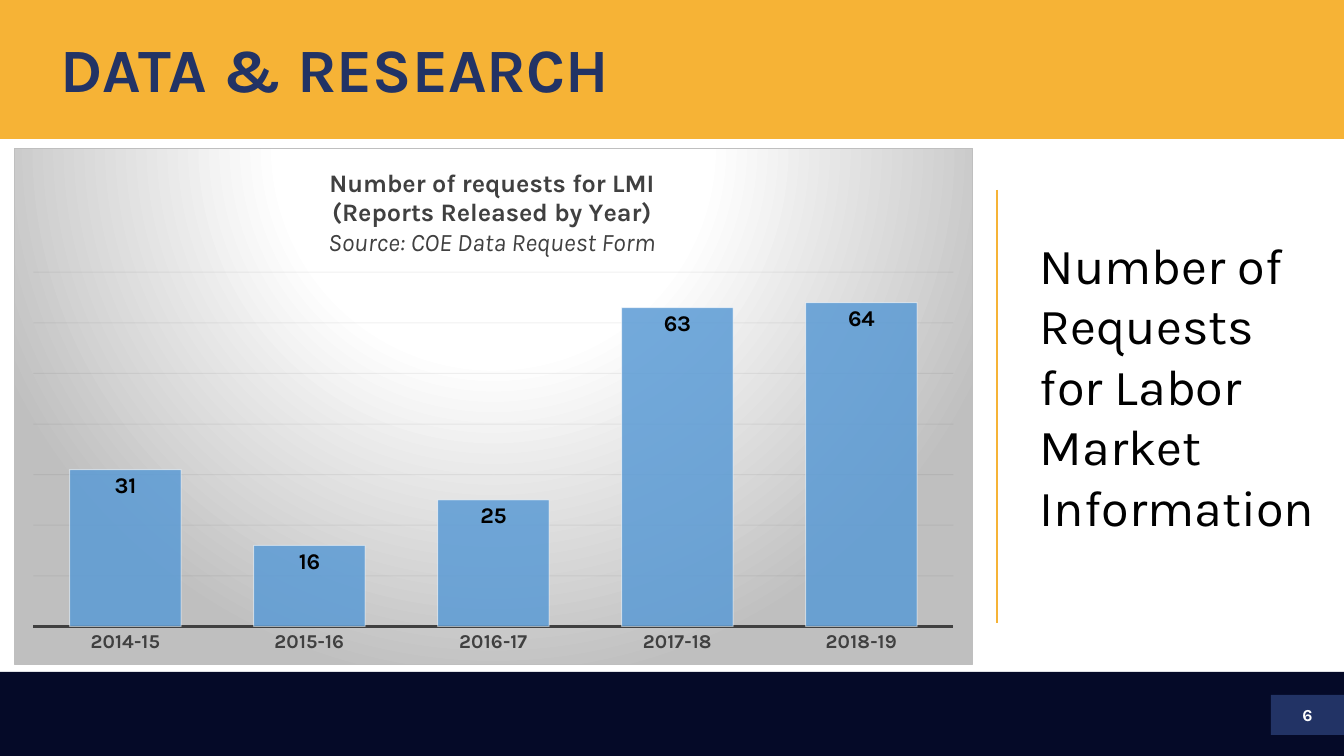
from lxml import etree
from pptx import Presentation
from pptx.chart.data import CategoryChartData
from pptx.dml.color import RGBColor
from pptx.enum.chart import XL_CHART_TYPE, XL_LABEL_POSITION, XL_TICK_MARK
from pptx.enum.shapes import MSO_CONNECTOR, MSO_SHAPE
from pptx.enum.text import MSO_ANCHOR, MSO_AUTO_SIZE, PP_ALIGN
from pptx.oxml import parse_xml
from pptx.oxml.ns import nsdecls, qn
from pptx.util import Pt

COLUMNS = XL_CHART_TYPE.COLUMN_CLUSTERED
INSIDE_END = XL_LABEL_POSITION.INSIDE_END
NO_TICK = XL_TICK_MARK.NONE
STRAIGHT = MSO_CONNECTOR.STRAIGHT
RECT = MSO_SHAPE.RECTANGLE
MIDDLE, TOP = MSO_ANCHOR.MIDDLE, MSO_ANCHOR.TOP
NO_FIT = MSO_AUTO_SIZE.NONE
LEFT, CENTER = PP_ALIGN.LEFT, PP_ALIGN.CENTER

FONT = "Karla"
GOLD, NAVY, BLUE = "F6B336", "050A28", "223365"
BLACK, WHITE, DARK = "000000", "FFFFFF", "404040"

TITLE = "DATA & RESEARCH"
SIDE_TEXT = "Number of Requests for Labor Market Information"
PAGE = "6"
CHART_TITLE = [
    ("Number of requests for LMI", True, False),
    ("(Reports Released by Year)", True, False),
    ("Source: COE Data Request Form", False, True),
]
REQUESTS = {"2014-15": 31, "2015-16": 16, "2016-17": 25, "2017-18": 63, "2018-19": 64}

BANDS = [
    ((0, 0, 1344, 139), GOLD),
    ((0, 672, 1344, 84), NAVY),
    ((1271, 695, 73, 40), BLUE),
]
TITLE_BOX = (50, 0, 1239, 146)
PAGE_BOX = (1271, 695, 73, 40)
SIDE_BOX = (1030, 229, 304, 315)
RULE = (997, 190, 997, 623)
CHART_BOX = (14, 148, 959, 517)
PLOT_BOX = (33, 272, 921, 355)
CHART_TITLE_AT = (325, 164)


def px(*values):
    return [round(v * 914400 / 100.8) for v in values]


def rgb(color):
    return RGBColor.from_string(color)


def style(font, size, color, bold=False, italic=False):
    font.name, font.size = FONT, Pt(size)
    font.bold, font.italic = bold, italic
    font.color.rgb = rgb(color)


def write(sp, text, size, color, bold=False, align=LEFT, anchor=TOP):
    tf = sp.text_frame
    tf.word_wrap, tf.auto_size, tf.vertical_anchor = True, NO_FIT, anchor
    p = tf.paragraphs[0]
    p.alignment = align
    r = p.add_run()
    r.text = text
    style(r.font, size, color, bold)
    return p


def set_line(line, color, width):
    line.color.rgb = rgb(color)
    line.width = Pt(width)


def set_alpha(fill, percent):
    for clr in fill.iter(qn("a:srgbClr")):
        etree.SubElement(clr, qn("a:alpha")).set("val", str(percent * 1000))


def place(parent, index, left, top, width=None, height=None, target=""):
    for old in parent.findall(qn("c:layout")):
        parent.remove(old)
    x, y, w, h = CHART_BOX
    layout = etree.Element(qn("c:layout"))
    manual = etree.SubElement(layout, qn("c:manualLayout"))
    values = [("layoutTarget", target), ("xMode", "edge"), ("yMode", "edge"),
              ("x", round((left - x) / w, 4)), ("y", round((top - y) / h, 4))]
    if width:
        values += [("w", round(width / w, 4)), ("h", round(height / h, 4))]
    for tag, value in values:
        if value != "":
            etree.SubElement(manual, qn("c:" + tag)).set("val", str(value))
    parent.insert(index, layout)


def add_requests_chart(s):
    data = CategoryChartData()
    data.categories = list(REQUESTS)
    data.add_series("Series 1", list(REQUESTS.values()))
    chart = s.shapes.add_chart(COLUMNS, *px(*CHART_BOX), data).chart
    chart.has_legend = False
    style(chart.font, 10, BLACK)

    chart.has_title = True
    tf = chart.chart_title.text_frame
    for i, (text, bold, italic) in enumerate(CHART_TITLE):
        p = tf.add_paragraph() if i else tf.paragraphs[0]
        r = p.add_run()
        r.text = text
        style(r.font, 18, DARK, bold, italic)
    chart_el = chart._chartSpace.find(qn("c:chart"))
    place(chart_el.find(qn("c:title")), 1, *CHART_TITLE_AT)
    place(chart_el.find(qn("c:plotArea")), 0, *PLOT_BOX, target="inner")

    cat = chart.category_axis
    cat.major_tick_mark = cat.minor_tick_mark = NO_TICK
    style(cat.tick_labels.font, 14, DARK, True)
    set_line(cat.format.line, DARK, 1.5)
    val = chart.value_axis
    val.minimum_scale, val.maximum_scale, val.major_unit = 0, 70, 10
    val.visible = False
    val.has_major_gridlines = True
    grid = val.major_gridlines.format.line
    set_line(grid, "0D0D0D", 0.75)
    set_alpha(val.major_gridlines._xAx.find(qn("c:majorGridlines")), 5)

    plot = chart.plots[0]
    plot.vary_by_categories = False
    plot.gap_width = 65
    ser = plot.series[0]
    ser.format.fill.solid()
    ser.format.fill.fore_color.rgb = rgb("5B9BD5")
    set_line(ser.format.line, WHITE, 0.75)
    sp_pr = ser._element.find(qn("c:spPr"))
    set_alpha(sp_pr.find(qn("a:solidFill")), 85)
    set_alpha(sp_pr.find(qn("a:ln")), 50)
    labels = ser.data_labels
    labels.show_value = True
    labels.position = INSIDE_END
    style(labels.font, 16, BLACK, True)

    stops = "".join(
        f'<a:gs pos="{pos * 1000}"><a:srgbClr val="{color}"/></a:gs>'
        for pos, color in [(0, WHITE), (39, WHITE), (100, "BFBFBF")])
    chart_el.addnext(parse_xml(
        f'<c:spPr {nsdecls("c", "a")}><a:gradFill><a:gsLst>{stops}</a:gsLst>'
        '<a:path path="circle"><a:fillToRect l="50000" t="-80000" r="50000" b="180000"/></a:path>'
        '</a:gradFill><a:ln w="9525"><a:solidFill><a:srgbClr val="BFBFBF"/></a:solidFill></a:ln>'
        '</c:spPr>'))


def main():
    prs = Presentation()
    prs.slide_width, prs.slide_height = px(1344, 756)
    s = prs.slides.add_slide(prs.slide_layouts[5])
    title = s.shapes.title

    for box, color in BANDS:
        sp = s.shapes.add_shape(RECT, *px(*box))
        sp.shadow.inherit = False
        sp.fill.solid()
        sp.fill.fore_color.rgb = rgb(color)
        sp.line.fill.background()

    title.left, title.top, title.width, title.height = px(*TITLE_BOX)
    p = write(title, TITLE, 44, BLUE, True, anchor=MIDDLE)
    p.line_spacing = 0.9
    s.shapes._spTree.append(title._element)

    write(s.shapes.add_textbox(*px(*PAGE_BOX)), PAGE, 12, WHITE, True, CENTER, MIDDLE)

    rule = s.shapes.add_connector(STRAIGHT, *px(*RULE))
    set_line(rule.line, GOLD, 1.5)
    etree.SubElement(rule._element.spPr, qn("a:effectLst"))

    add_requests_chart(s)
    write(s.shapes.add_textbox(*px(*SIDE_BOX)), SIDE_TEXT, 36, BLACK)
    prs.save("out.pptx")


if __name__ == "__main__":
    main()
